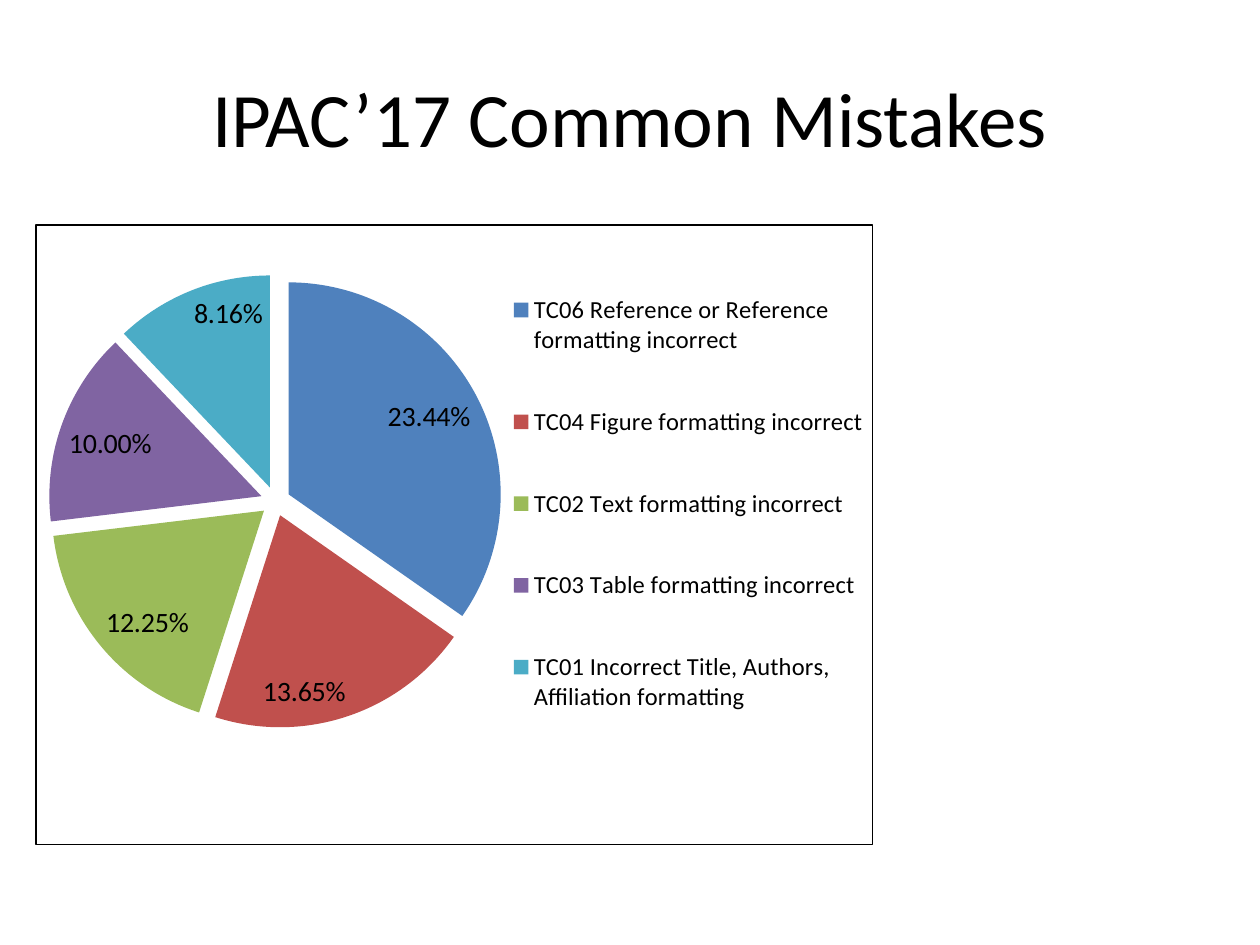
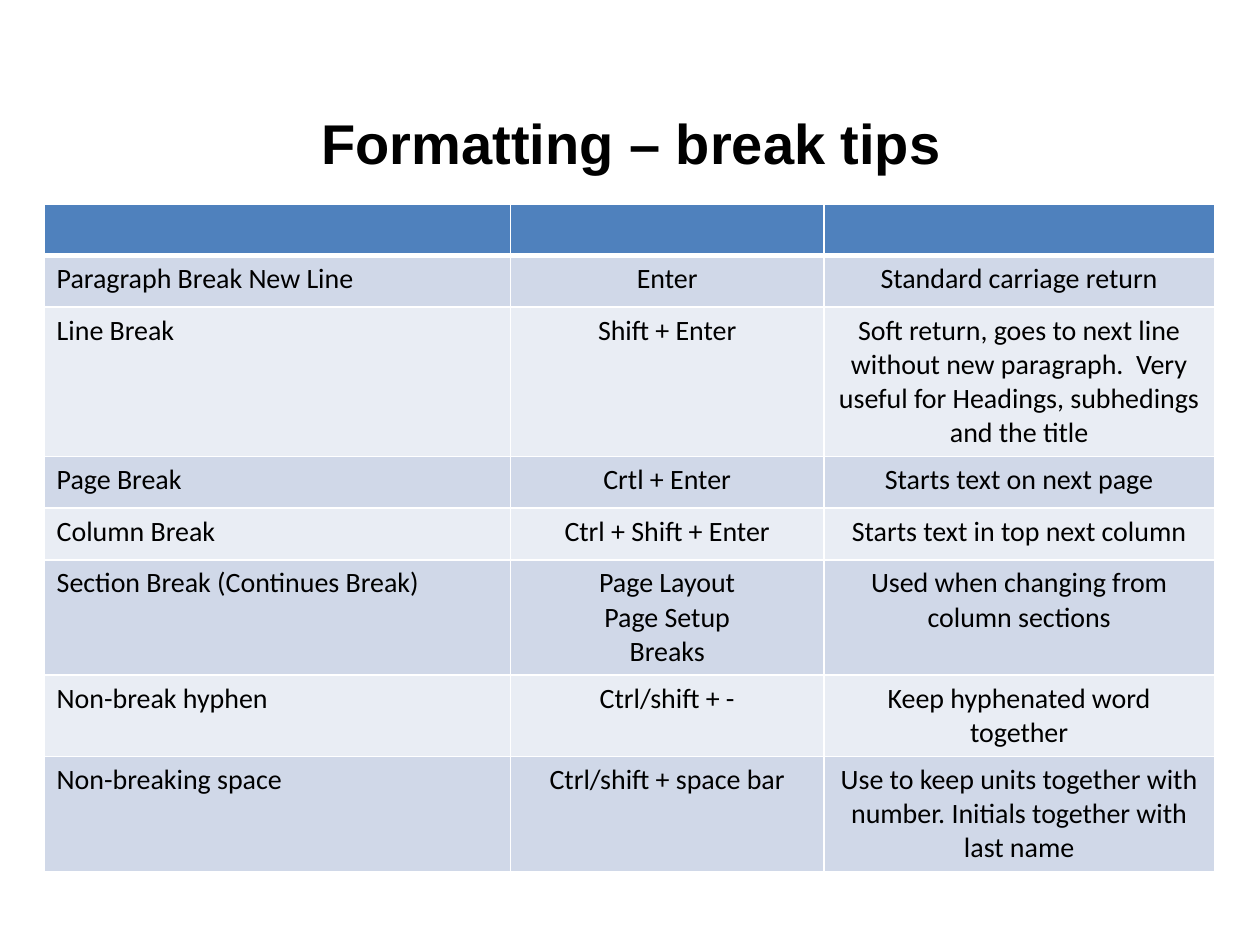
"""Build two slides: a pie of common paper mistakes and a table of break tips."""
from dataclasses import dataclass

from lxml.etree import SubElement
from pptx import Presentation
from pptx.chart.data import CategoryChartData
from pptx.dml.color import RGBColor
from pptx.enum.chart import XL_CHART_TYPE as ChartType
from pptx.enum.chart import XL_LABEL_POSITION as LabelPosition
from pptx.enum.chart import XL_LEGEND_POSITION as LegendPosition
from pptx.enum.text import MSO_ANCHOR as Anchor
from pptx.enum.text import PP_ALIGN as Align
from pptx.oxml import parse_xml
from pptx.oxml.ns import nsdecls, qn
from pptx.util import Cm, Pt

COLORS = {
    "text": "000000",
    "line": "FFFFFF",
    "header": "4F81BD",
    "band_dark": "D0D8E8",
    "band_light": "E9EDF4",
}
BODY_FONT = "Calibri"
TITLE_ONLY = 5


@dataclass(frozen=True)
class Area:
    left: float
    top: float
    width: float
    height: float

    def lengths(self) -> tuple:
        return Cm(self.left), Cm(self.top), Cm(self.width), Cm(self.height)


@dataclass(frozen=True)
class Title:
    text: str
    area: Area
    font: str
    size: int
    bold: bool


@dataclass(frozen=True)
class Mistake:
    label: str
    share: float
    color: str


@dataclass(frozen=True)
class BreakTip:
    name: str
    keys: str
    purpose: str


MISTAKES_TITLE = Title("IPAC’17 Common Mistakes", Area(1.27, 0.76, 22.86, 3.18), BODY_FONT, 44, False)
TIPS_TITLE = Title("Formatting – break tips", Area(1.3, 1.12, 22.86, 3.48), "Arial", 32, True)

MISTAKES = [
    Mistake("TC06 Reference or Reference formatting incorrect", 0.2344, "4F81BD"),
    Mistake("TC04 Figure formatting incorrect", 0.1365, "C0504D"),
    Mistake("TC02 Text formatting incorrect", 0.1225, "9BBB59"),
    Mistake("TC03 Table formatting incorrect", 0.1, "8064A2"),
    Mistake("TC01 Incorrect Title, Authors, Affiliation formatting", 0.0816, "4BACC6"),
]
CHART_AREA = Area(0.71, 4.52, 16.89, 12.52)
PLOT_SHARE = Area(0.015, 0.08, 0.543, 0.732)
LEGEND_SHARE = Area(0.56, 0.03, 0.44, 0.84)

TIPS = [
    BreakTip("Paragraph Break New Line", "Enter", "Standard carriage return"),
    BreakTip("Line Break", "Shift + Enter",
             "Soft return, goes to next line without new paragraph.  Very useful for "
             "Headings, subhedings and the title"),
    BreakTip("Page Break", "Crtl + Enter", "Starts text on next page"),
    BreakTip("Column Break", "Ctrl + Shift + Enter", "Starts text in top next column"),
    BreakTip("Section Break (Continues Break)", "Page Layout\nPage Setup\nBreaks",
             "Used when changing from column sections"),
    BreakTip("Non-break hyphen", "Ctrl/shift + -", "Keep hyphenated word together"),
    BreakTip("Non-breaking space", "Ctrl/shift + space bar",
             "Use to keep units together with number. Initials together with last name"),
]
COLUMN_WIDTHS = [9.4, 6.32, 7.87]
ROW_HEIGHT = 1.04
TABLE_AREA = Area(0.89, 4.11, sum(COLUMN_WIDTHS), ROW_HEIGHT * (len(TIPS) + 1))


def style_font(font, name: str, size: int, bold: bool = False) -> None:
    font.name, font.size, font.bold = name, Pt(size), bold
    font.color.rgb = RGBColor.from_string(COLORS["text"])


def add_page(deck, title: Title):
    page = deck.slides.add_slide(deck.slide_layouts[TITLE_ONLY])
    box = page.shapes.title
    box.left, box.top, box.width, box.height = title.area.lengths()
    box.text_frame.text = title.text
    box.text_frame.vertical_anchor = Anchor.MIDDLE
    para = box.text_frame.paragraphs[0]
    para.alignment = Align.CENTER
    style_font(para.font, title.font, title.size, title.bold)
    return page


def layout_xml(share: Area, inner: bool = False):
    target = '<c:layoutTarget val="inner"/>' if inner else ""
    return parse_xml(
        f'<c:layout {nsdecls("c")}><c:manualLayout>{target}'
        '<c:xMode val="edge"/><c:yMode val="edge"/>'
        f'<c:x val="{share.left}"/><c:y val="{share.top}"/>'
        f'<c:w val="{share.width}"/><c:h val="{share.height}"/>'
        "</c:manualLayout></c:layout>"
    )


def place_plot_and_legend(chart_xml) -> None:
    plot_area = chart_xml.find(qn("c:plotArea"))
    legend = chart_xml.find(qn("c:legend"))
    for parent in (plot_area, legend):
        for layout in parent.findall(qn("c:layout")):
            parent.remove(layout)
    plot_area.insert(0, layout_xml(PLOT_SHARE, inner=True))
    legend.find(qn("c:legendPos")).addnext(layout_xml(LEGEND_SHARE))


def add_mistakes_pie(page) -> None:
    data = CategoryChartData(number_format="0.00%")
    data.categories = [mistake.label for mistake in MISTAKES]
    data.add_series("Series 1", [mistake.share for mistake in MISTAKES])
    chart = page.shapes.add_chart(ChartType.PIE, *CHART_AREA.lengths(), data).chart
    chart.has_title = False
    style_font(chart.font, BODY_FONT, 10)

    chart.has_legend = True
    chart.legend.position = LegendPosition.RIGHT
    chart.legend.include_in_layout = False
    style_font(chart.legend.font, BODY_FONT, 14)

    plot = chart.plots[0]
    plot.vary_by_categories = True
    plot.has_data_labels = True
    labels = plot.data_labels
    labels.show_value, labels.show_percentage = True, False
    labels.number_format, labels.number_format_is_linked = "0.00%", False
    labels.position = LabelPosition.INSIDE_END
    style_font(labels.font, BODY_FONT, 16)

    series = plot.series[0]
    for index, mistake in enumerate(MISTAKES):
        fill = series.points[index].format.fill
        fill.solid()
        fill.fore_color.rgb = RGBColor.from_string(mistake.color)
    explosion = parse_xml(f'<c:explosion {nsdecls("c")} val="7"/>')
    series._element.find(qn("c:tx")).addnext(explosion)

    chart_xml = chart._chartSpace.find(qn("c:chart"))
    place_plot_and_legend(chart_xml)
    chart_xml.addnext(parse_xml(
        f'<c:spPr {nsdecls("c", "a")}><a:noFill/><a:ln w="{Pt(0.75)}"><a:solidFill>'
        f'<a:srgbClr val="{COLORS["text"]}"/></a:solidFill></a:ln></c:spPr>'
    ))


def style_cell(cell, fill: str, top: int, bottom: int) -> None:
    properties = cell._tc.get_or_add_tcPr()
    for side, width in (("L", 1), ("R", 1), ("T", top), ("B", bottom)):
        line = SubElement(properties, qn(f"a:ln{side}"), w=str(Pt(width)))
        solid = SubElement(line, qn("a:solidFill"))
        SubElement(solid, qn("a:srgbClr"), val=COLORS["line"])
    cell.fill.solid()
    cell.fill.fore_color.rgb = RGBColor.from_string(COLORS[fill])


def fill_cell(cell, text: str, alignment: Align) -> None:
    cell.text_frame.text = text
    for para in cell.text_frame.paragraphs:
        para.alignment = alignment
        style_font(para.font, BODY_FONT, 16)


def add_tips_table(page) -> None:
    table = page.shapes.add_table(len(TIPS) + 1, len(COLUMN_WIDTHS), *TABLE_AREA.lengths()).table
    for column, width in zip(table.columns, COLUMN_WIDTHS):
        column.width = Cm(width)
    for row in table.rows:
        row.height = Cm(ROW_HEIGHT)
    for cell in table.rows[0].cells:
        style_cell(cell, "header", top=1, bottom=3)
    for number, tip in enumerate(TIPS, start=1):
        band = "band_dark" if number % 2 else "band_light"
        for column, text in enumerate((tip.name, tip.keys, tip.purpose)):
            cell = table.cell(number, column)
            style_cell(cell, band, top=3 if number == 1 else 1, bottom=1)
            fill_cell(cell, text, Align.CENTER if column else Align.LEFT)


def main() -> None:
    deck = Presentation()
    deck.slide_width, deck.slide_height = Cm(25.4), Cm(19.05)
    add_mistakes_pie(add_page(deck, MISTAKES_TITLE))
    add_tips_table(add_page(deck, TIPS_TITLE))
    deck.save("out.pptx")


if __name__ == "__main__":
    main()
